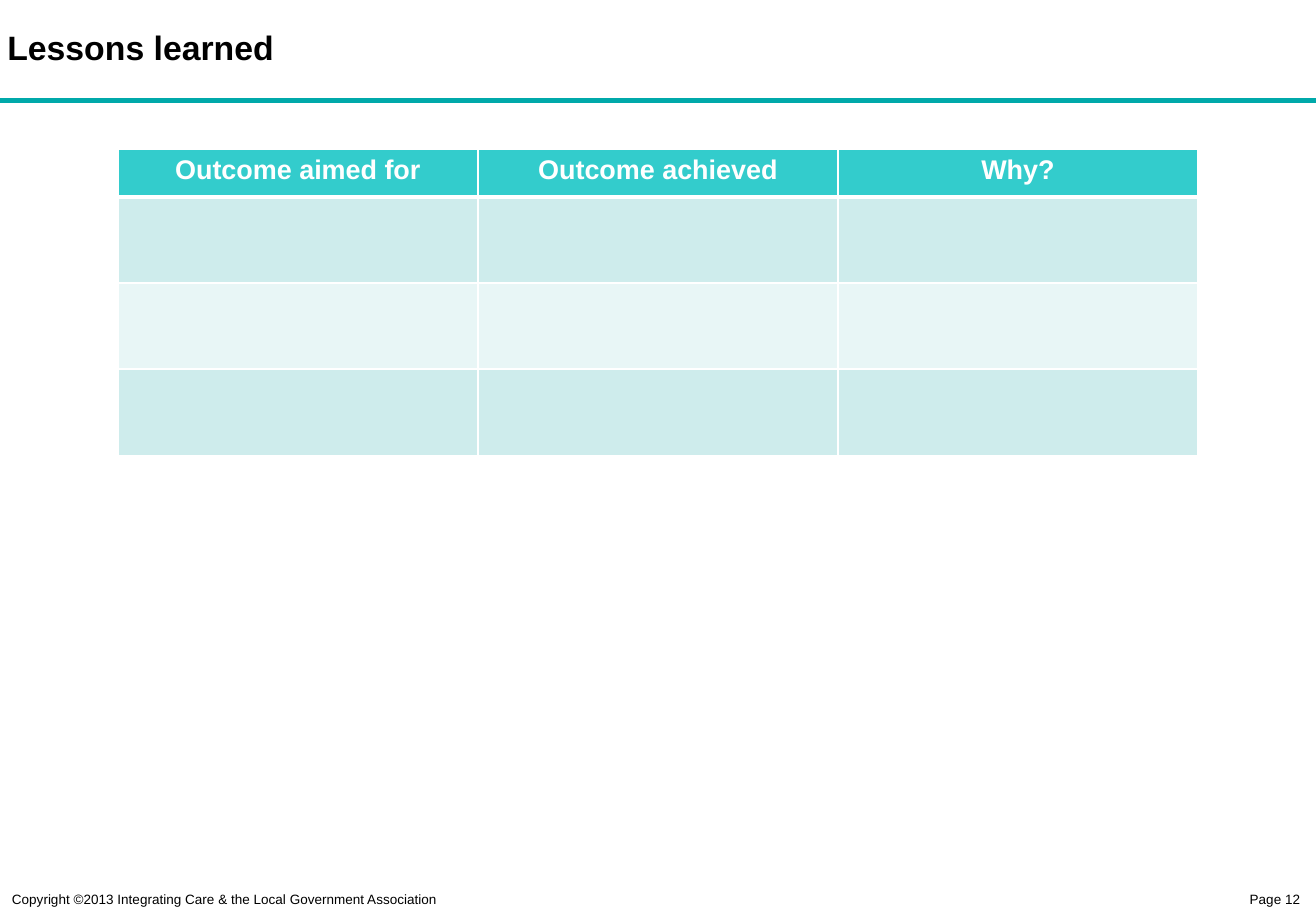
from lxml import etree
from pptx import Presentation
from pptx.dml.color import RGBColor
from pptx.enum.shapes import MSO_CONNECTOR as Connector
from pptx.enum.text import MSO_ANCHOR as Anchor, PP_ALIGN as Align
from pptx.oxml.ns import qn
from pptx.util import Inches, Pt

WIDTH, HEIGHT = 10.83, 7.5
BLACK, WHITE = "000000", "FFFFFF"
TEAL, HEADER_FILL = "00A9AA", "33CCCC"
BAND_FILLS = ["CEECEC", "E8F6F6"]


def color(value):
    return RGBColor.from_string(value)


class SlideBuilder:
    font_name = "Arial"

    def __init__(self, slide):
        self.slide = slide

    def style(self, paragraph, size, fill=BLACK, bold=False, align=Align.LEFT):
        paragraph.alignment = align
        font = paragraph.font
        font.name, font.size, font.bold = self.font_name, Pt(size), bold
        font.color.rgb = color(fill)

    def title(self, text, left, top, width, height):
        shape = self.slide.shapes.title
        shape.left, shape.top = Inches(left), Inches(top)
        shape.width, shape.height = Inches(width), Inches(height)
        frame = shape.text_frame
        frame.text = text
        frame.vertical_anchor = Anchor.MIDDLE
        frame.margin_left = frame.margin_right = Inches(0.08)
        frame.margin_top = frame.margin_bottom = Inches(0.08)
        self.style(frame.paragraphs[0], 20, bold=True)

    def rule(self, top):
        line = self.slide.shapes.add_connector(
            Connector.STRAIGHT, 0, Inches(top), Inches(WIDTH), Inches(top))
        line.line.color.rgb = color(TEAL)
        line.line.width = Pt(3)
        etree.SubElement(line._element.spPr, qn("a:effectLst"))

    def footer(self, text, left, width, align=Align.LEFT):
        box = self.slide.shapes.add_textbox(
            Inches(left), Inches(7.22), Inches(width), Inches(0.28))
        box.text_frame.word_wrap = True
        paragraph = box.text_frame.paragraphs[0]
        paragraph.text = text
        paragraph.line_spacing = 1.5
        self.style(paragraph, 8, align=align)

    def borders(self, cell, **widths):
        """Draw white cell borders; widths are points keyed by side: L, R, T, B."""
        properties = cell._tc.get_or_add_tcPr()
        for index, (side, width) in enumerate(widths.items()):
            line = etree.Element(qn(f"a:ln{side}"), w=str(Pt(width)))
            fill = etree.SubElement(line, qn("a:solidFill"))
            etree.SubElement(fill, qn("a:srgbClr"), val=WHITE)
            properties.insert(index, line)

    def table(self, headings, left, top, width, row_heights):
        table = self.slide.shapes.add_table(
            len(row_heights), len(headings), Inches(left), Inches(top),
            Inches(width), Inches(sum(row_heights))).table
        for row, height in zip(table.rows, row_heights):
            row.height = Inches(height)
        for column, heading in enumerate(headings):
            table.cell(0, column).text = heading
        for index, row in enumerate(table.rows):
            row_fill = BAND_FILLS[(index - 1) % 2] if index else HEADER_FILL
            for cell in row.cells:
                cell.fill.solid()
                cell.fill.fore_color.rgb = color(row_fill)
                self.borders(cell, L=1, R=1, T=3 if index == 1 else 1,
                             B=1 if index else 3)
                self.style(cell.text_frame.paragraphs[0], 16,
                           BLACK if index else WHITE, not index, Align.CENTER)


def main():
    presentation = Presentation()
    presentation.slide_width = Inches(WIDTH)
    presentation.slide_height = Inches(HEIGHT)
    builder = SlideBuilder(presentation.slides.add_slide(presentation.slide_layouts[5]))
    builder.rule(0.83)
    builder.footer("Copyright ©2013 Integrating Care & the Local Government Association", 0, 3.74)
    builder.footer("Page 12 ", 8.96, 1.87, Align.RIGHT)
    builder.title("Lessons learned", -0.02, 0.01, 7.56, 0.76)
    builder.table(["Outcome aimed for", "Outcome achieved", "Why?"],
                  0.97, 1.23, 8.89, [0.39] + [0.71] * 3)
    presentation.save("out.pptx")


if __name__ == "__main__":
    main()
